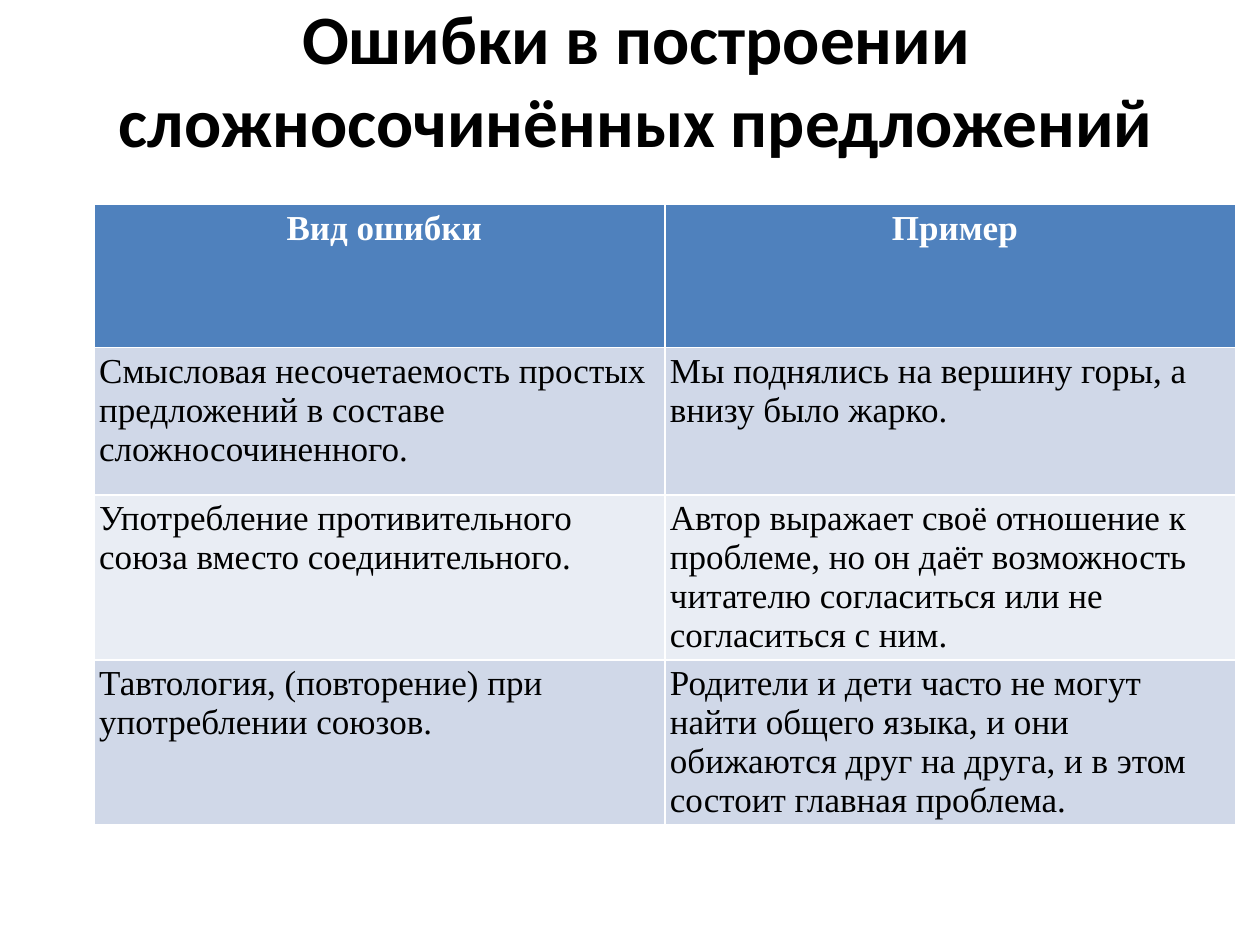
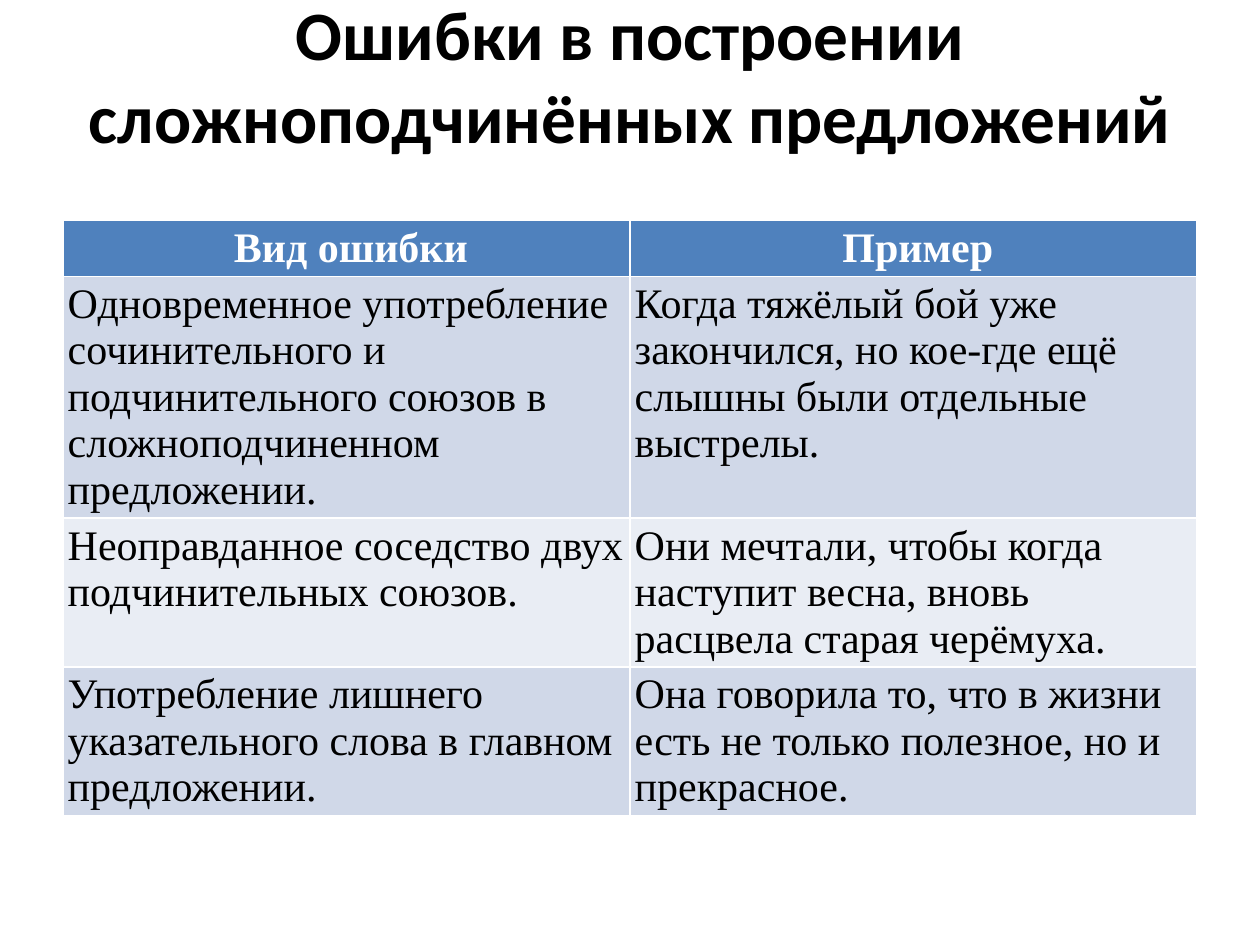
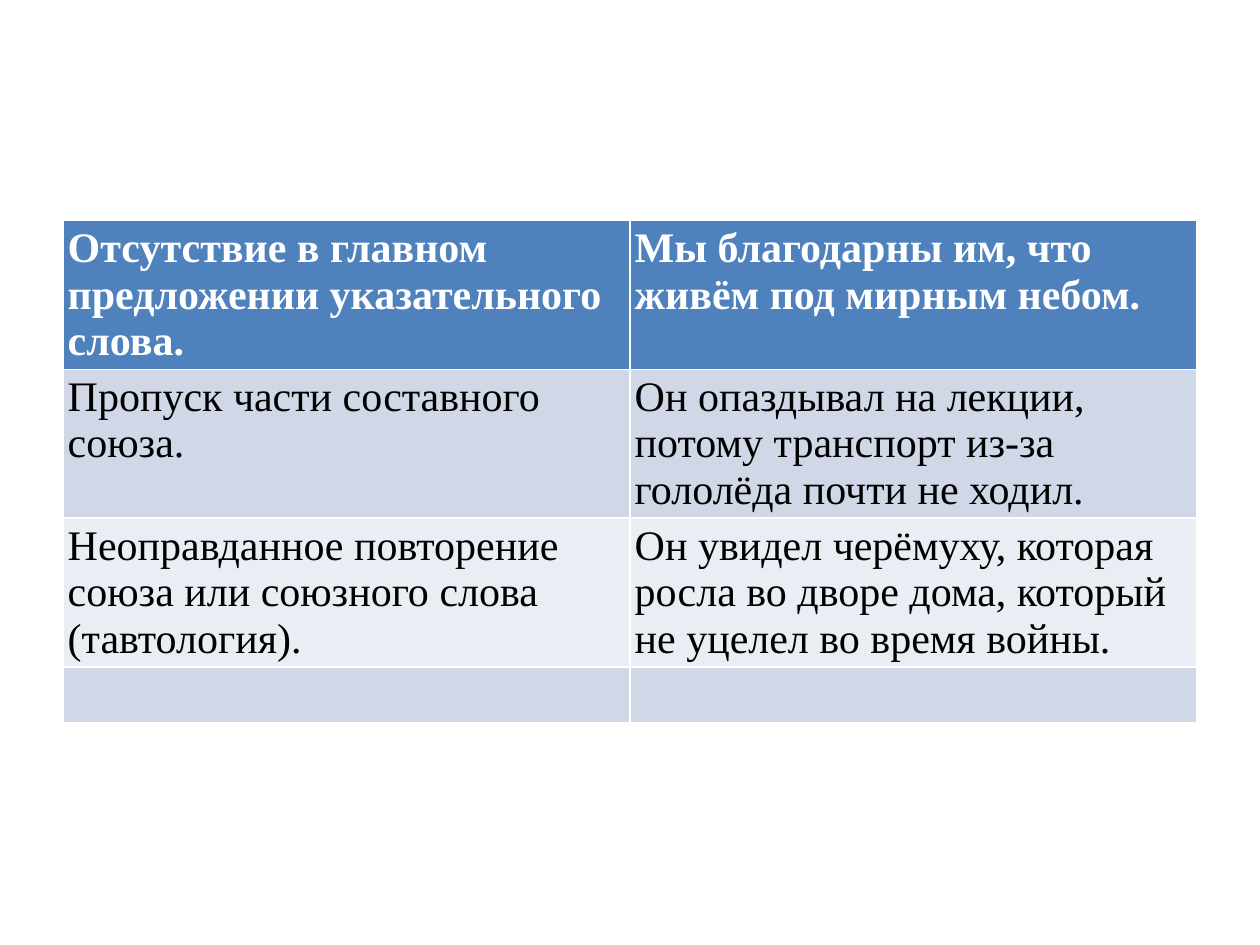
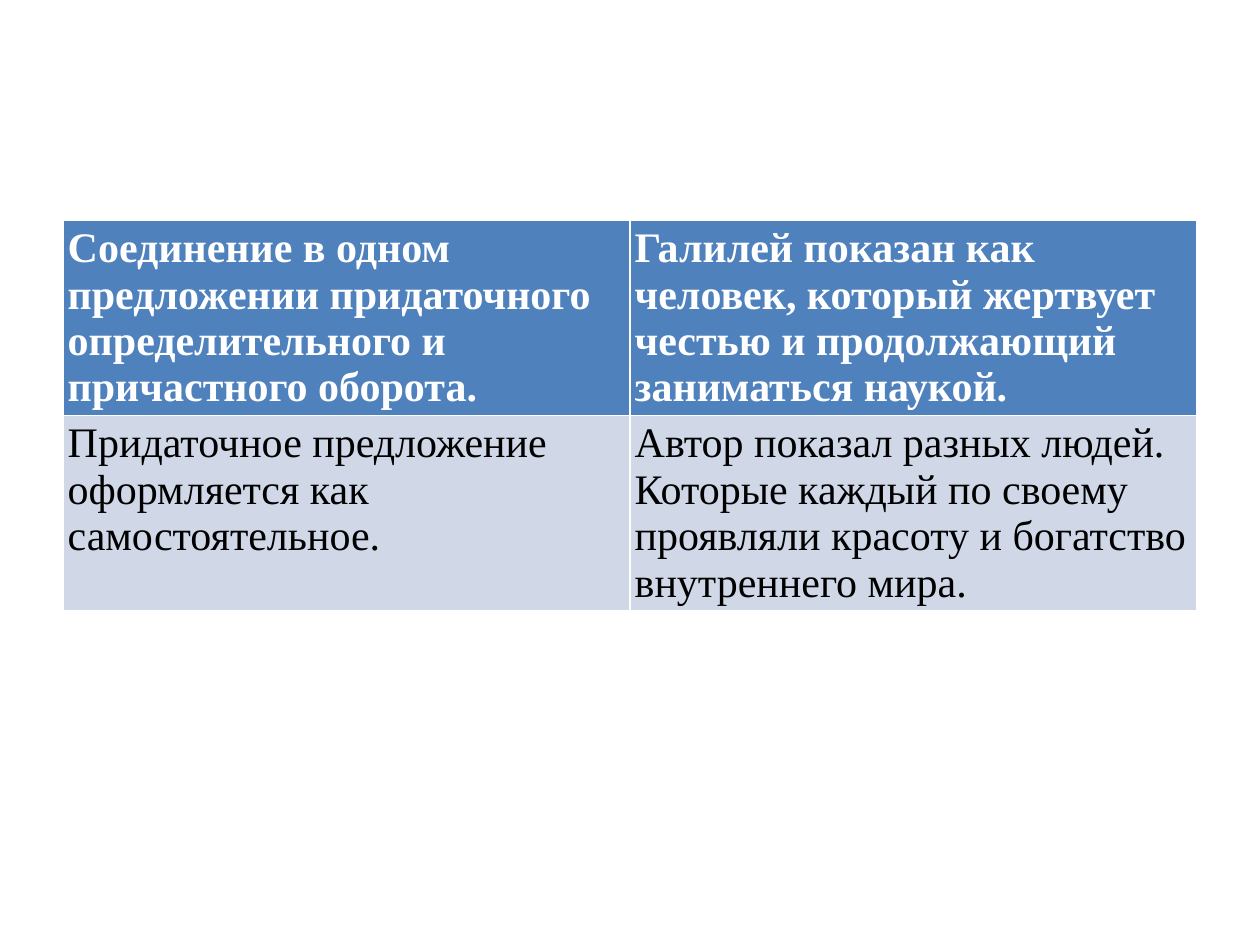
"""Builds four slides on errors in complex sentences, each with a two-column table."""
from dataclasses import dataclass

from pptx import Presentation
from pptx.dml.color import RGBColor
from pptx.enum.text import MSO_ANCHOR, MSO_AUTO_SIZE, PP_ALIGN
from pptx.util import Pt

CENTER, LEFT = PP_ALIGN.CENTER, PP_ALIGN.LEFT
MIDDLE, NO_FIT = MSO_ANCHOR.MIDDLE, MSO_AUTO_SIZE.NONE
TITLE_ONLY, BLANK = 5, 6


@dataclass(frozen=True)
class Theme:
    title_font: str = "Calibri"
    table_font: str = "Times New Roman"
    title_size: float = 39.6
    text: str = "000000"
    header_text: str = "FFFFFF"
    header_fill: str = "4F81BD"
    bands: tuple = ("D0D8E8", "E9EDF4")
    cell_margin: float = 2.7
    title_bottom_inset: float = 51.5
    header_indent: float = 5


THEME = Theme()
HEADINGS = ("Вид ошибки", "Пример")
FRAME = (36, 126, 648)

SLIDES = [
    {
        "title": "Ошибки в построении сложносочинённых предложений",
        "title_box": (48.2, 15.1, 630.7, 107.3),
        "table_box": (54, 116.6, 652.3, 370),
        "size": 20,
        "row_heights": (82, 84.2, 94.3, 84.2),
        "rows": [
            HEADINGS,
            ("Смысловая несочетаемость простых предложений в составе сложносочиненного.",
             "Мы поднялись на вершину горы, а внизу было жарко."),
            ("Употребление противительного союза вместо соединительного.",
             "Автор выражает своё отношение к проблеме, но он даёт возможность "
             "читателю согласиться или не согласиться с ним."),
            ("Тавтология, (повторение) при употреблении союзов.",
             "Родители и дети часто не могут найти общего языка, и они обижаются "
             "друг на друга, и в этом состоит главная проблема."),
        ],
    },
    {
        "title": "Ошибки в построении сложноподчинённых предложений",
        "title_box": (36, 21.6, 648, 90),
        "table_box": (*FRAME, 369.4),
        "size": 24,
        "row_heights": (29.5,) * 4,
        "rows": [
            HEADINGS,
            ("Одновременное употребление сочинительного и подчинительного союзов "
             "в сложноподчиненном предложении.",
             "Когда тяжёлый бой уже закончился, но кое-где ещё слышны были отдельные выстрелы."),
            ("Неоправданное соседство двух подчинительных союзов.",
             "Они мечтали, чтобы когда наступит весна, вновь расцвела старая черёмуха."),
            ("Употребление лишнего указательного слова в главном предложении.",
             "Она говорила то, что в жизни есть не только полезное, но и прекрасное."),
        ],
    },
    {
        "table_box": (*FRAME, 311.8),
        "size": 24,
        "row_heights": (29.5, 29.5, 29.5, 32),
        "rows": [
            ("Отсутствие в главном предложении указательного слова.",
             "Мы благодарны им, что живём под мирным небом."),
            ("Пропуск части составного союза.",
             "Он опаздывал на лекции, потому транспорт из-за гололёда почти не ходил."),
            ("Неоправданное повторение союза или союзного слова (тавтология).",
             "Он увидел черёмуху, которая росла во дворе дома, который не уцелел во время войны."),
            ("", ""),
        ],
    },
    {
        "table_box": (*FRAME, 242.6),
        "size": 24,
        "row_heights": (29.5,) * 2,
        "rows": [
            ("Соединение в одном предложении придаточного определительного и причастного оборота.",
             "Галилей показан как человек, который жертвует честью и продолжающий заниматься наукой."),
            ("Придаточное предложение оформляется как самостоятельное.",
             "Автор показал разных людей. Которые каждый по своему проявляли красоту "
             "и богатство внутреннего мира."),
        ],
    },
]


def add_run(paragraph, text, font, size, color, bold):
    run = paragraph.add_run()
    run.text = text
    run.font.name = font
    run.font.size = Pt(size)
    run.font.bold = bold
    run.font.color.rgb = RGBColor.from_string(color)


deck = Presentation()
deck.slide_width, deck.slide_height = Pt(720), Pt(540)

for content in SLIDES:
    has_title = "title" in content
    slide = deck.slides.add_slide(deck.slide_layouts[TITLE_ONLY if has_title else BLANK])

    if has_title:
        title = slide.shapes.title
        title.left, title.top, title.width, title.height = map(Pt, content["title_box"])
        heading = title.text_frame
        heading.word_wrap = True
        heading.auto_size = NO_FIT
        heading.vertical_anchor = MIDDLE
        heading.margin_bottom = Pt(THEME.title_bottom_inset)
        heading.paragraphs[0].alignment = CENTER
        add_run(heading.paragraphs[0], content["title"], THEME.title_font,
                THEME.title_size, THEME.text, True)

    rows = content["rows"]
    frame = slide.shapes.add_table(len(rows), 2, *map(Pt, content["table_box"]))
    errors = frame.table
    for row_index, (texts, row_height) in enumerate(zip(rows, content["row_heights"])):
        errors.rows[row_index].height = Pt(row_height)
        is_header = row_index == 0
        fill = THEME.header_fill if is_header else THEME.bands[(row_index - 1) % 2]
        color = THEME.header_text if is_header else THEME.text
        is_heading = texts == HEADINGS
        for column, text in enumerate(texts):
            cell = errors.cell(row_index, column)
            cell.fill.solid()
            cell.fill.fore_color.rgb = RGBColor.from_string(fill)
            margin = Pt(THEME.cell_margin)
            cell.margin_left = cell.margin_right = margin
            cell.margin_top = cell.margin_bottom = margin
            if is_heading:
                cell.margin_left = Pt(THEME.cell_margin + THEME.header_indent)
            paragraph = cell.text_frame.paragraphs[0]
            paragraph.alignment = CENTER if is_heading else LEFT
            if text:
                add_run(paragraph, text, THEME.table_font, content["size"], color, is_header)
    frame.height = Pt(content["table_box"][3])

deck.save("out.pptx")
